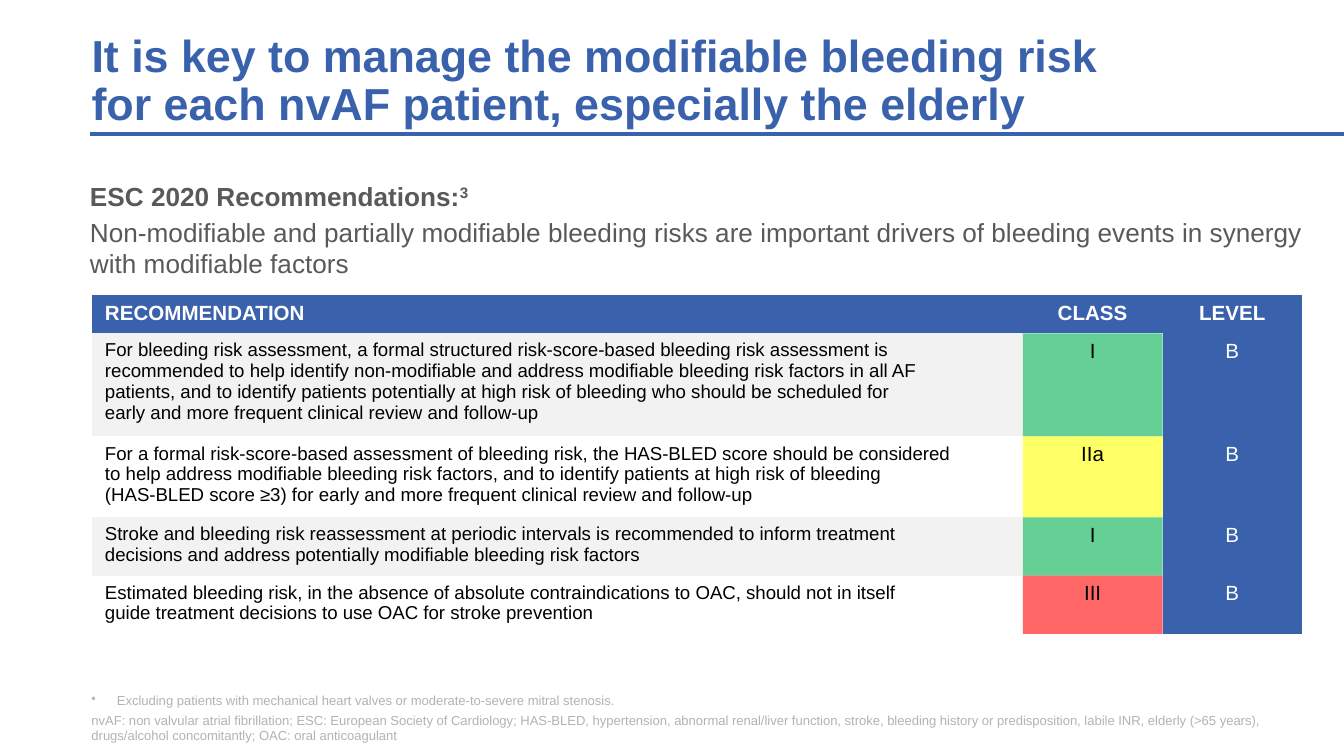
from dataclasses import dataclass

from lxml.etree import SubElement
from pptx import Presentation
from pptx.dml.color import RGBColor as Color
from pptx.enum.shapes import MSO_CONNECTOR as Connector
from pptx.enum.text import MSO_ANCHOR as Anchor, MSO_AUTO_SIZE as AutoSize, PP_ALIGN as Align
from pptx.oxml.ns import qn
from pptx.util import Cm, Pt


@dataclass(frozen=True)
class Theme:
    font: str = "Arial"
    blue: str = "3961AC"
    white: str = "FFFFFF"
    black: str = "000000"
    body: str = "595959"
    note: str = "B3B2B5"
    band: str = "F2F2F2"
    green: str = "00B050"
    yellow: str = "FFFF00"
    red: str = "FF0000"
    title_size: int = 24
    body_size: int = 14
    label_size: int = 11
    cell_size: int = 10
    note_size: int = 7


theme = Theme()


def style(para, size, color, bold=False, align=Align.LEFT):
    para.alignment = align
    para.font.name = theme.font
    para.font.size = Pt(size)
    para.font.bold = bold
    para.font.color.rgb = Color.from_string(color)


def place(box, left, top, width, height, anchor):
    box.left, box.top, box.width, box.height = Cm(left), Cm(top), Cm(width), Cm(height)
    frame = box.text_frame
    frame.margin_left = frame.margin_right = frame.margin_top = frame.margin_bottom = 0
    frame.vertical_anchor = anchor
    frame.word_wrap = True
    frame.auto_size = AutoSize.NONE
    return frame


deck = Presentation()
deck.slide_width, deck.slide_height = Cm(25.4), Cm(14.29)
page = deck.slides.add_slide(deck.slide_layouts[1])

rule = page.shapes.add_connector(Connector.STRAIGHT, Cm(1.7), Cm(2.54), Cm(25.4), Cm(2.54))
rule.line.color.rgb = Color.from_string(theme.blue)
rule.line.width = Pt(2.25)
SubElement(rule._element.spPr, qn("a:effectLst"))

title = place(page.shapes.title, 1.73, 0.61, 22.99, 1.85, Anchor.BOTTOM)
title.text = "It is key to manage the modifiable bleeding risk\vfor each nvAF patient, especially the elderly"
style(title.paragraphs[0], theme.title_size, theme.blue, bold=True)
title.paragraphs[0].line_spacing = 0.9

intro = place(page.placeholders[1], 1.7, 3.4, 23.01, 1.91, Anchor.TOP)
intro.text = (
    "ESC 2020 Recommendations:\n"
    "Non-modifiable and partially modifiable bleeding risks are important drivers of "
    "bleeding events in synergy with modifiable factors"
)
for para, bold in zip(intro.paragraphs, (True, False)):
    style(para, theme.body_size, theme.body, bold)
    props = para._p.get_or_add_pPr()
    props.set("marL", "0")
    props.set("indent", "0")
    props.insert_element_before(props.makeelement(qn("a:buNone")), "a:tabLst", "a:defRPr")
reference = intro.paragraphs[0].add_run()
reference.text = "3"
reference._r.get_or_add_rPr().set("baseline", "30000")

headings = ("RECOMMENDATION", "CLASS", "LEVEL")
recommendations = [
    (
        "For bleeding risk assessment, a formal structured risk-score-based bleeding risk assessment is "
        "recommended to help identify non-modifiable and address modifiable bleeding risk factors in all AF\v"
        "patients, and to identify patients potentially at high risk of bleeding who should be scheduled for\v"
        "early and more frequent clinical review and follow-up",
        "I", "B",
    ),
    (
        "For a formal risk-score-based assessment of bleeding risk, the HAS-BLED score should be considered\v"
        "to help address modifiable bleeding risk factors, and to identify patients at high risk of bleeding\v"
        "(HAS-BLED score ≥3) for early and more frequent clinical review and follow-up",
        "IIa", "B",
    ),
    (
        "Stroke and bleeding risk reassessment at periodic intervals is recommended to inform treatment\v"
        "decisions and address potentially modifiable bleeding risk factors",
        "I", "B",
    ),
    (
        "Estimated bleeding risk, in the absence of absolute contraindications to OAC, should not in itself\v"
        "guide treatment decisions to use OAC for stroke prevention",
        "III", "B",
    ),
]
class_colors = {"I": theme.green, "IIa": theme.yellow, "III": theme.red}
column_widths = (17.6, 2.64, 2.64)
row_heights = (0.72, 1.95, 1.53, 1.1, 1.1)

grid = page.shapes.add_table(
    len(row_heights), len(column_widths), Cm(1.73), Cm(5.58), Cm(sum(column_widths)), Cm(sum(row_heights))
).table
grid.horz_banding = False
grid._tbl.tblPr.find(qn("a:tableStyleId")).text = "{2D5ABB26-0587-4C30-8999-92F81FD0307C}"
for column, width in zip(grid.columns, column_widths):
    column.width = Cm(width)
for row, height in zip(grid.rows, row_heights):
    row.height = Cm(height)

for row_index, texts in enumerate([headings, *recommendations]):
    for column_index, text in enumerate(texts):
        cell = grid.cell(row_index, column_index)
        cell.text = text
        header = row_index == 0
        fill, color, size = theme.blue, theme.white, theme.label_size
        if not header and column_index == 0:
            fill = theme.band if row_index % 2 else None
            color, size = theme.black, theme.cell_size
        elif not header and column_index == 1:
            fill, color = class_colors[text], theme.black
        style(cell.text_frame.paragraphs[0], size, color, header, Align.CENTER if column_index else Align.LEFT)
        if fill is None:
            cell.fill.background()
            continue
        cell.fill.solid()
        cell.fill.fore_color.rgb = Color.from_string(fill)
        if fill in class_colors.values():
            tint = cell._tc.tcPr.find(qn("a:solidFill")).find(qn("a:srgbClr"))
            SubElement(tint, qn("a:alpha"), val="60000")

notes = place(page.shapes.add_textbox(0, 0, 0, 0), 1.73, 13.08, 22.99, 0.97, Anchor.BOTTOM)
notes.text = (
    "Excluding patients with mechanical heart valves or moderate-to-severe mitral stenosis.\n"
    "nvAF: non valvular atrial fibrillation; ESC: European Society of Cardiology; HAS-BLED, hypertension, "
    "abnormal renal/liver function, stroke, bleeding history or predisposition, labile INR, "
    "elderly (>65 years), drugs/alcohol concomitantly; OAC: oral anticoagulant"
)
for para in notes.paragraphs:
    style(para, theme.note_size, theme.note)
    para.space_after = Pt(2)
props = notes.paragraphs[0]._p.get_or_add_pPr()
props.set("marL", str(Cm(0.48)))
props.set("indent", str(-Cm(0.48)))
props.insert_element_before(props.makeelement(qn("a:buChar"), char="•"), "a:tabLst", "a:defRPr")

deck.save("out.pptx")
